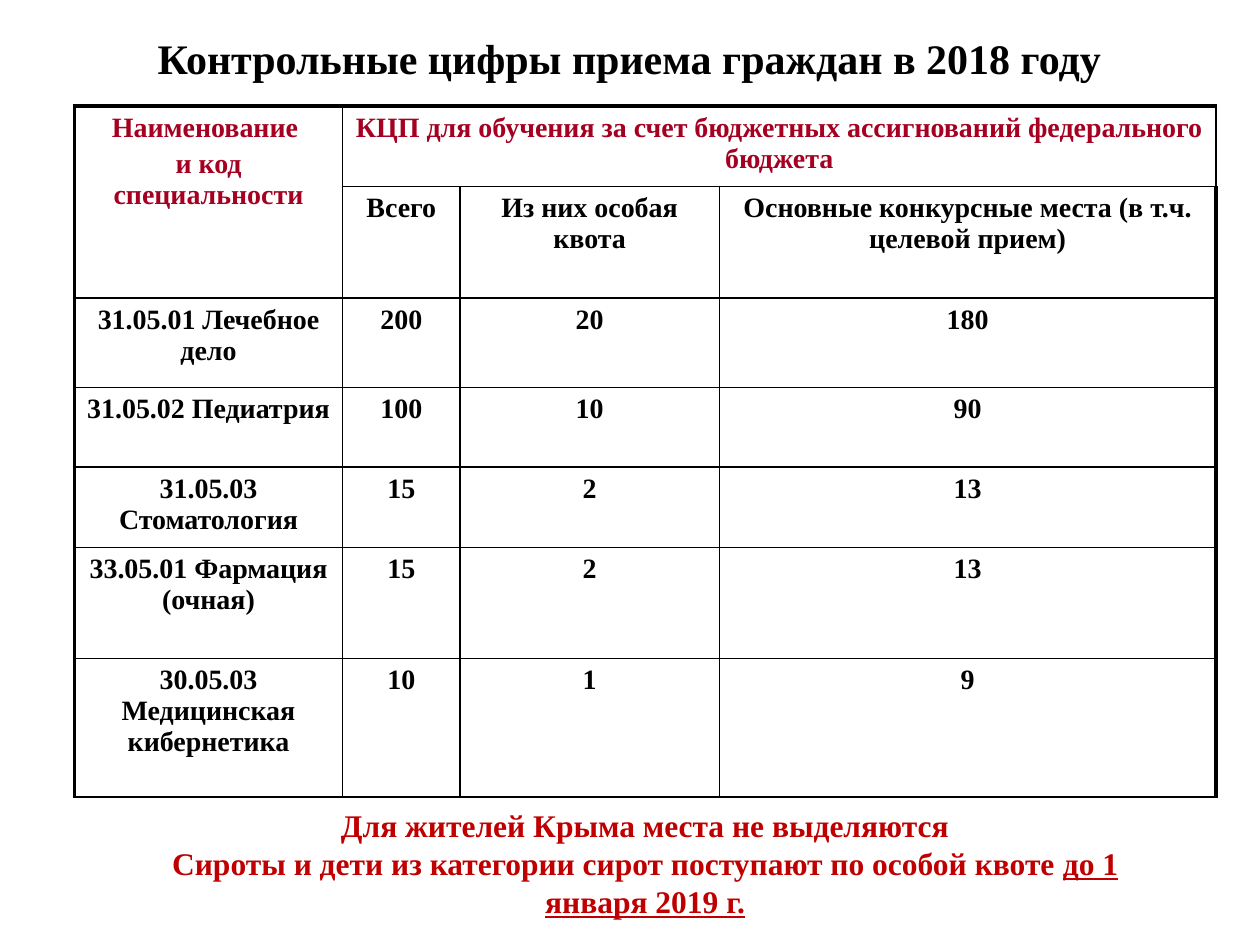
import pptx
import pptx.dml.color
import pptx.enum.text
import pptx.oxml.ns
import pptx.util
from lxml import etree

FONT = "Times New Roman"
COLORS = {"text": "000000", "heading": "A50021", "note": "C00000", "border": "000000"}
CENTER = pptx.enum.text.PP_ALIGN.CENTER
COLS = [2.13, 0.93, 2.06, 3.94]
ROWS = [0.64, 0.88, 0.71, 0.63, 0.64, 0.88, 1.1]
THIN, THICK = 1, 2.25

HEADINGS = {
    (0, 0): ["Наименование ", "и код специальности"],
    (0, 1): ["КЦП для обучения за счет бюджетных ассигнований федерального бюджета"],
}
SUBHEADINGS = ["Всего", "Из них особая квота",
               "Основные конкурсные места (в т.ч. целевой прием)"]
SPECIALTIES = [
    ("31.05.01 Лечебное дело", 200, 20, 180),
    ("31.05.02 Педиатрия", 100, 10, 90),
    ("31.05.03 Стоматология", 15, 2, 13),
    ("33.05.01 Фармация (очная)", 15, 2, 13),
    ("30.05.03 Медицинская кибернетика", 10, 1, 9),
]


def inches(values):
    return [pptx.util.Inches(v) for v in values]


def add_run(p, text, size, color, underline=None):
    r = p.add_run()
    r.text = text
    r.font.name = FONT
    r.font.size = pptx.util.Pt(size)
    r.font.bold = True
    r.font.underline = underline
    r.font.color.rgb = pptx.dml.color.RGBColor.from_string(COLORS[color])


def fill_text(tf, paragraphs, size, color, gap=0):
    """Each paragraph is a list of (text, underline) runs."""
    for i, runs in enumerate(paragraphs):
        p = tf.add_paragraph() if i else tf.paragraphs[0]
        p.alignment = CENTER
        p.space_before = pptx.util.Pt(gap if i else 0)
        for text, underline in runs:
            add_run(p, text, size, color, underline)


def set_borders(cell, widths):
    tc_pr = cell._tc.get_or_add_tcPr()
    for side in ("L", "R", "T", "B"):
        ln = etree.SubElement(tc_pr, pptx.oxml.ns.qn("a:ln" + side),
                              w=str(pptx.util.Pt(widths.get(side, THIN))))
        fill = etree.SubElement(ln, pptx.oxml.ns.qn("a:solidFill"))
        etree.SubElement(fill, pptx.oxml.ns.qn("a:srgbClr"), val=COLORS["border"])


def add_title(slide, box):
    sp = slide.shapes.title
    sp.left, sp.top, sp.width, sp.height = inches(box)
    tf = sp.text_frame
    tf.word_wrap = True
    tf.auto_size = pptx.enum.text.MSO_AUTO_SIZE.NONE
    tf.vertical_anchor = pptx.enum.text.MSO_ANCHOR.TOP
    fill_text(tf, [[("Контрольные цифры приема граждан в 2018 году", None)]], 24, "text")


def add_quota_table(slide, left, top):
    box = inches([left, top, sum(COLS), sum(ROWS)])
    table = slide.shapes.add_table(len(ROWS), len(COLS), *box).table
    table.first_row = table.horz_banding = False
    for col, width in zip(table.columns, inches(COLS)):
        col.width = width
    for row, height in zip(table.rows, inches(ROWS)):
        row.height = height

    # Outer frame is thick on the left, top and right
    last = len(COLS) - 1
    for r in range(len(ROWS)):
        for c in range(len(COLS)):
            edges = {"L": c == 0, "R": c == last, "T": r == 0}
            cell = table.cell(r, c)
            set_borders(cell, {side: THICK for side, outer in edges.items() if outer})
            cell.fill.background()

    # Two-level header
    table.cell(0, 0).merge(table.cell(1, 0))
    table.cell(0, 1).merge(table.cell(0, last))
    for (r, c), lines in HEADINGS.items():
        fill_text(table.cell(r, c).text_frame, [[(line, None)] for line in lines],
                  16, "heading", gap=3.2)
    for c, text in enumerate(SUBHEADINGS, 1):
        fill_text(table.cell(1, c).text_frame, [[(text, None)]], 16, "text")

    # One row per specialty
    for r, values in enumerate(SPECIALTIES, 2):
        for c, value in enumerate(values):
            fill_text(table.cell(r, c).text_frame, [[(str(value), None)]], 16, "text")


def add_note(slide, box):
    tf = slide.shapes.add_textbox(*inches(box)).text_frame
    tf.word_wrap = True
    fill_text(tf, [
        [("Для жителей Крыма места не выделяются", None)],
        [("Сироты и дети из категории сирот поступают по особой квоте ", None),
         ("до 1 января 2019 г.", True)],
    ], 18, "note")


def main():
    prs = pptx.Presentation()
    prs.slide_width, prs.slide_height = inches([10, 7.5])
    slide = prs.slides.add_slide(prs.slide_layouts[5])
    add_quota_table(slide, 0.59, 0.84)
    add_title(slide, [0.35, 0.21, 9.29, 0.51])
    add_note(slide, [0.83, 6.35, 8.58, 1.01])
    prs.save("out.pptx")


if __name__ == "__main__":
    main()
